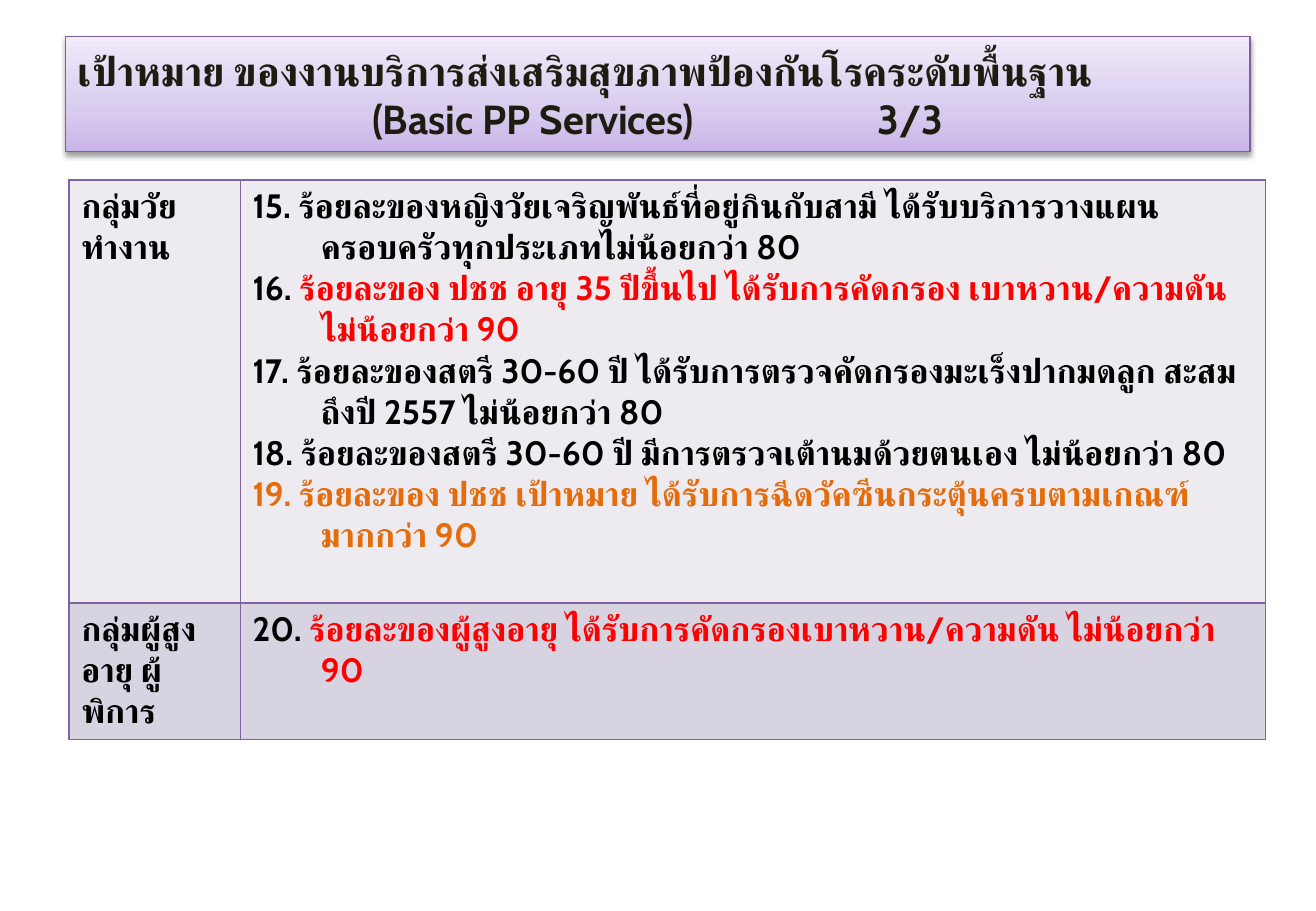
"""Build a slide of basic health service targets by age group."""
import pptx
import pptx.util
import pptx.dml.color
import pptx.enum.text
import pptx.oxml
import pptx.oxml.ns
import copy

Pt = pptx.util.Pt
qn = pptx.oxml.ns.qn
NS = 'xmlns:a="http://schemas.openxmlformats.org/drawingml/2006/main"'

HUES = {"ink": "1E1C11", "black": "000000", "red": "FF0000", "orange": "E46C0A",
        "edge": "7D60A0", "grid": "8064A2"}
FADE = [(0, "C9B5E8"), (0.35, "D8CBEE"), (1, "F0EAF9")]
FONT = {"name": "Cabin", "bold": True}

TITLE = ["เป้าหมาย ของงานบริการส่งเสริมสุขภาพป้องกันโรคระดับพื้นฐาน",
         "\t(Basic PP Services)\t3/3"]
TABS = [174.5, 474]
GROUPS = [
    {"name": "กลุ่มวัยทำงาน", "fill": "EDEAF0", "height": 250.7, "goals": [
        [("15. ร้อยละของหญิงวัยเจริญพันธ์ที่อยู่กินกับสามี ได้รับบริการวางแผนครอบครัวทุกประเภทไม่น้อยกว่า 80", "black")],
        [("16. ", "black"),
         ("ร้อยละของ ปชช อายุ 35 ปีขึ้นไป ได้รับการคัดกรอง เบาหวาน/ความดัน ไม่น้อยกว่า 90", "red")],
        [("17. ร้อยละของสตรี 30-60 ปี ได้รับการตรวจคัดกรองมะเร็งปากมดลูก สะสม ถึงปี 2557 ไม่น้อยกว่า 80", "black")],
        [("18. ร้อยละของสตรี 30-60 ปี มีการตรวจเต้านมด้วยตนเอง ไม่น้อยกว่า 80", "black")],
        [("19. ร้อยละของ ปชช เป้าหมาย ได้รับการฉีดวัคซีนกระตุ้นครบตามเกณฑ์ มากกว่า 90", "orange")]]},
    {"name": "กลุ่มผู้สูงอายุ ผู้พิการ", "fill": "D8D3E0", "height": 81, "goals": [
        [("20. ", "black"),
         ("ร้อยละของผู้สูงอายุ ได้รับการคัดกรองเบาหวาน/ความดัน ไม่น้อยกว่า 90", "red")]]},
]
BOX = {"left": Pt(38.9), "top": Pt(21.6), "width": Pt(702), "height": Pt(68.4)}
GRID = {"left": 41, "top": 106.6}
COLS = [101.5, 607.5]
HANG = 40.5


def rgb(code):
    return pptx.dml.color.RGBColor.from_string(code)


def put(thing, values):
    for key, value in values.items():
        setattr(thing, key, value)


def add_run(para, text, size, hue):
    run = para.add_run()
    run.text = text
    run.font.color.rgb = rgb(HUES[hue])
    put(run.font, {**FONT, "size": Pt(size)})
    run.font._element.append(pptx.oxml.parse_xml(f'<a:cs {NS} typeface="{FONT["name"]}"/>'))


def fill_text(frame, paras, size, hang=0):
    for i, parts in enumerate(paras):
        para = frame.paragraphs[0] if i == 0 else frame.add_paragraph()
        para.alignment = pptx.enum.text.PP_ALIGN.LEFT
        if hang:
            props = para._p.get_or_add_pPr()
            props.set("marL", str(Pt(hang)))
            props.set("indent", str(-Pt(hang)))
        for text, hue in parts:
            add_run(para, text, size, hue)


def add_title(slide):
    box = slide.shapes.title
    put(box, BOX)
    box.fill.gradient()
    box.fill.gradient_angle = 90
    stops = box.fill._xPr.find(qn("a:gradFill")).find(qn("a:gsLst"))
    stops.insert(1, copy.deepcopy(stops[0]))
    for stop, (place, code) in zip(box.fill.gradient_stops, FADE):
        stop.position = place
        stop.color.rgb = rgb(code)
    box.line.color.rgb = rgb(HUES["edge"])
    box.line.width = Pt(0.75)
    box.shadow.inherit = False
    box._element.spPr.find(qn("a:effectLst")).append(pptx.oxml.parse_xml(
        f'<a:outerShdw {NS} blurRad="{Pt(3.1)}" dist="{Pt(1.6)}" dir="5400000" rotWithShape="0">'
        '<a:srgbClr val="000000"><a:alpha val="38000"/></a:srgbClr></a:outerShdw>'))
    frame = box.text_frame
    put(frame, {"word_wrap": True, "auto_size": pptx.enum.text.MSO_AUTO_SIZE.NONE,
                "vertical_anchor": pptx.enum.text.MSO_ANCHOR.MIDDLE})
    fill_text(frame, [[(line, "ink")] for line in TITLE], 24)
    marks = "".join(f'<a:tab pos="{Pt(tab)}" algn="l"/>' for tab in TABS)
    frame.paragraphs[1]._p.get_or_add_pPr().append(
        pptx.oxml.parse_xml(f"<a:tabLst {NS}>{marks}</a:tabLst>"))


def style_cell(cell, code):
    props = cell._tc.get_or_add_tcPr()
    for side in ("lnL", "lnR", "lnT", "lnB"):
        props.append(pptx.oxml.parse_xml(
            f'<a:{side} {NS} w="{Pt(1)}"><a:solidFill><a:srgbClr val="{HUES["grid"]}"/>'
            f"</a:solidFill></a:{side}>"))
    cell.fill.solid()
    cell.fill.fore_color.rgb = rgb(code)


def add_goals(slide):
    high = sum(group["height"] for group in GROUPS)
    table = slide.shapes.add_table(len(GROUPS), len(COLS), Pt(GRID["left"]), Pt(GRID["top"]),
                                   Pt(sum(COLS)), Pt(high)).table
    put(table, {"first_row": False, "horz_banding": False})
    for col, width in zip(table.columns, COLS):
        col.width = Pt(width)
    for row, group in zip(table.rows, GROUPS):
        row.height = Pt(group["height"])
        name, goals = row.cells
        fill_text(name.text_frame, [[(group["name"], "black")]], 20)
        fill_text(goals.text_frame, group["goals"], 20, HANG)
        for cell in (name, goals):
            style_cell(cell, group["fill"])


def main():
    deck = pptx.Presentation()
    put(deck, {"slide_width": Pt(780), "slide_height": Pt(540)})
    slide = deck.slides.add_slide(deck.slide_layouts[5])
    add_title(slide)
    add_goals(slide)
    deck.save("out.pptx")


if __name__ == "__main__":
    main()
